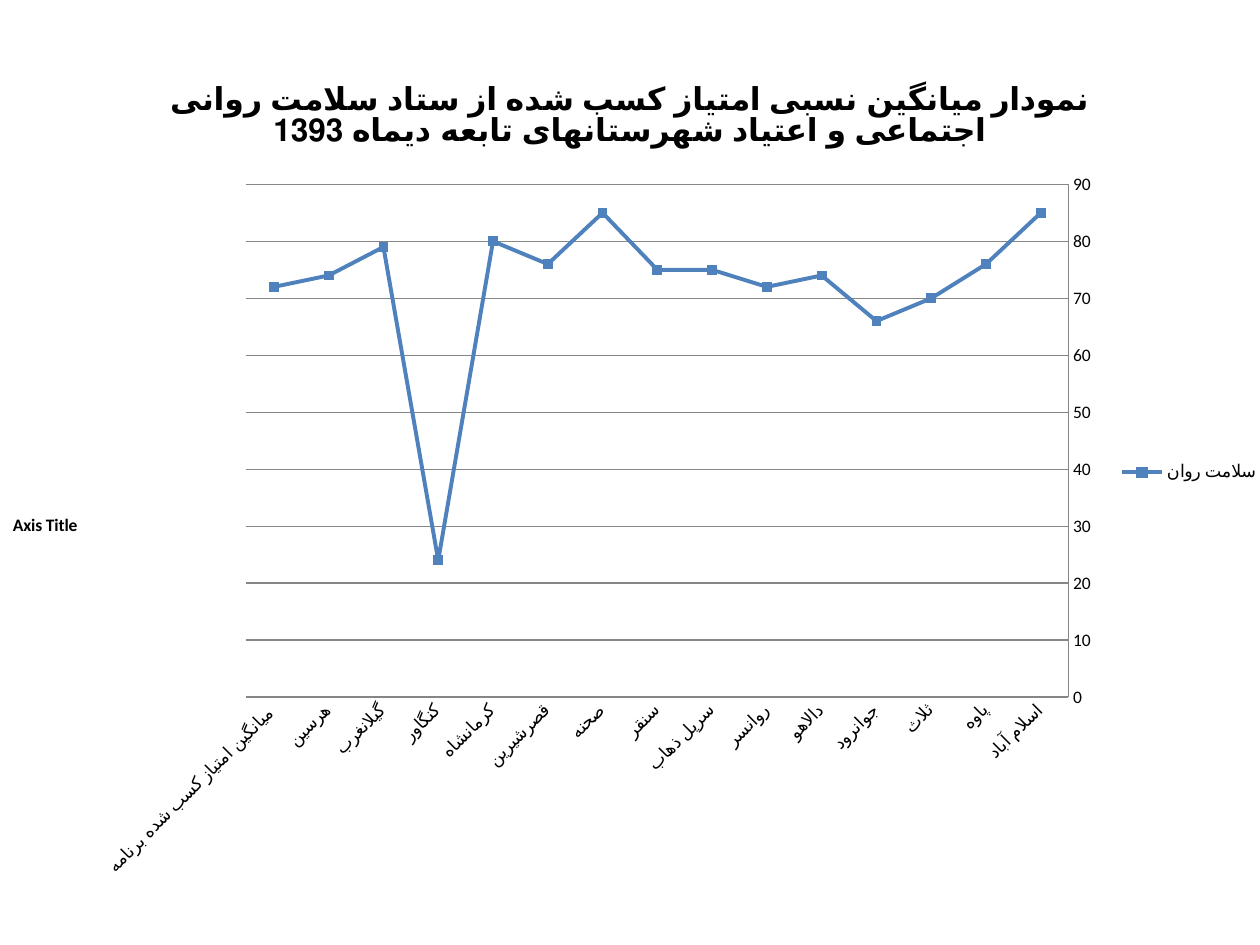
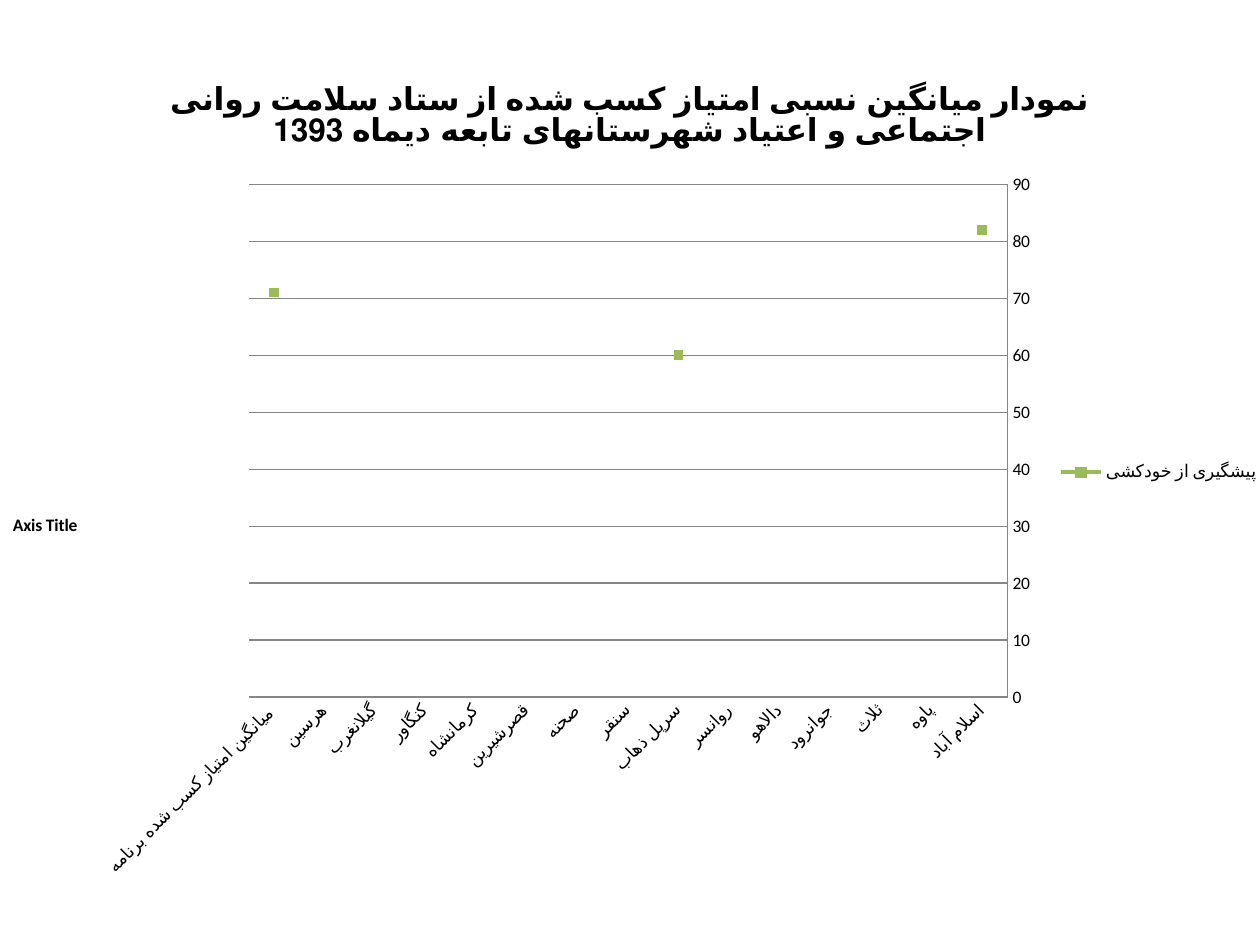
from pptx import Presentation
from pptx.chart.data import CategoryChartData
from pptx.dml.color import RGBColor
from pptx.enum.chart import XL_CHART_TYPE, XL_LEGEND_POSITION, XL_MARKER_STYLE, XL_TICK_MARK
from pptx.util import Inches, Pt

LINE_MARKERS = XL_CHART_TYPE.LINE_MARKERS
RIGHT = XL_LEGEND_POSITION.RIGHT
SQUARE = XL_MARKER_STYLE.SQUARE
NO_TICK = XL_TICK_MARK.NONE

FONT = "Calibri"
BLACK, GRAY, BLUE, GREEN = "000000", "868686", "4F81BD", "9BBB59"
CHART_BOX = (-0.1, 0.415, 10.2, 6.67)
TITLE = ("نمودار میانگین نسبی امتیاز کسب شده از ستاد سلامت روانی "
         "اجتماعی و اعتیاد شهرستانهای تابعه دیماه 1393")
AXIS_TITLE = "Axis Title"
AVERAGE = "میانگین امتیاز کسب شده برنامه "
COUNTIES = ["اسلام آباد", "پاوه", "ثلاث", "جوانرود", "دالاهو", "روانسر",
            "سرپل ذهاب", "سنقر", "صحنه", "قصرشیرین", "کرمانشاه", "کنگاور",
            "گیلانغرب", "هرسین", AVERAGE]
MENTAL_HEALTH = [85, 76, 70, 66, 74, 72, 75, 75, 85, 76, 80, 24, 79, 74, 72]
SUICIDE_PREVENTION = {"اسلام آباد": 82, "سرپل ذهاب": 60, AVERAGE: 71}


def rgb(color):
    """Turn a hex string into a colour."""
    return RGBColor.from_string(color)


def style_font(font, size, bold=False):
    """Apply the shared typeface and colour at the given size."""
    font.name = FONT
    font.size = Pt(size)
    font.bold = bold
    font.color.rgb = rgb(BLACK)


def style_line(line, color, width):
    """Give a line its colour and width."""
    line.color.rgb = rgb(color)
    line.width = Pt(width)


def add_title_text(title, text, size, rtl=False):
    """Write a bold chart or axis title."""
    tf = title.text_frame
    p = tf.paragraphs[0]
    if rtl:
        p._p.get_or_add_pPr().set("rtl", "1")
    r = p.add_run()
    r.text = text
    style_font(r.font, size, True)
    return tf


def style_axes(chart):
    """Reverse the counties and draw the value axis with gridlines."""
    cat, val = chart.category_axis, chart.value_axis
    cat.reverse_order = True
    cat.has_major_gridlines = False
    val.has_major_gridlines = True
    style_line(val.major_gridlines.format.line, GRAY, 0.75)
    for axis in (cat, val):
        axis.major_tick_mark = axis.minor_tick_mark = NO_TICK
        style_line(axis.format.line, GRAY, 0.75)
    tf = add_title_text(val.axis_title, AXIS_TITLE, 10)
    tf._txBody.bodyPr.set("rot", "0")
    tf._txBody.bodyPr.set("vert", "horz")


def style_series(series, color):
    """Draw a straight line with square markers in one colour."""
    series.smooth = False
    style_line(series.format.line, color, 2.25)
    marker = series.marker
    marker.style = SQUARE
    marker.size = 5
    marker.format.fill.solid()
    marker.format.fill.fore_color.rgb = rgb(color)
    style_line(marker.format.line, color, 0.75)


def add_score_slide(prs, box, name, scores, color):
    """Add a slide with the score line chart of one programme."""
    s = prs.slides.add_slide(prs.slide_layouts[6])
    data = CategoryChartData()
    data.categories = COUNTIES
    data.add_series(name, scores)
    frame = s.shapes.add_chart(LINE_MARKERS, *map(Inches, box), data)
    chart = frame.chart
    style_font(chart.font, 10)
    chart.has_title = True
    add_title_text(chart.chart_title, TITLE, 18, rtl=True)
    chart.has_legend = True
    chart.legend.position = RIGHT
    chart.legend.include_in_layout = False
    style_axes(chart)
    chart.plots[0].vary_by_categories = False
    style_series(chart.series[0], color)


def main():
    """Build the deck."""
    prs = Presentation()
    prs.slide_width, prs.slide_height = Inches(10), Inches(7.5)
    add_score_slide(prs, CHART_BOX, "سلامت روان", MENTAL_HEALTH, BLUE)
    suicide_scores = [SUICIDE_PREVENTION.get(county) for county in COUNTIES]
    add_score_slide(prs, CHART_BOX, "پیشگیری از خودکشی", suicide_scores, GREEN)
    prs.save("out.pptx")


if __name__ == "__main__":
    main()
